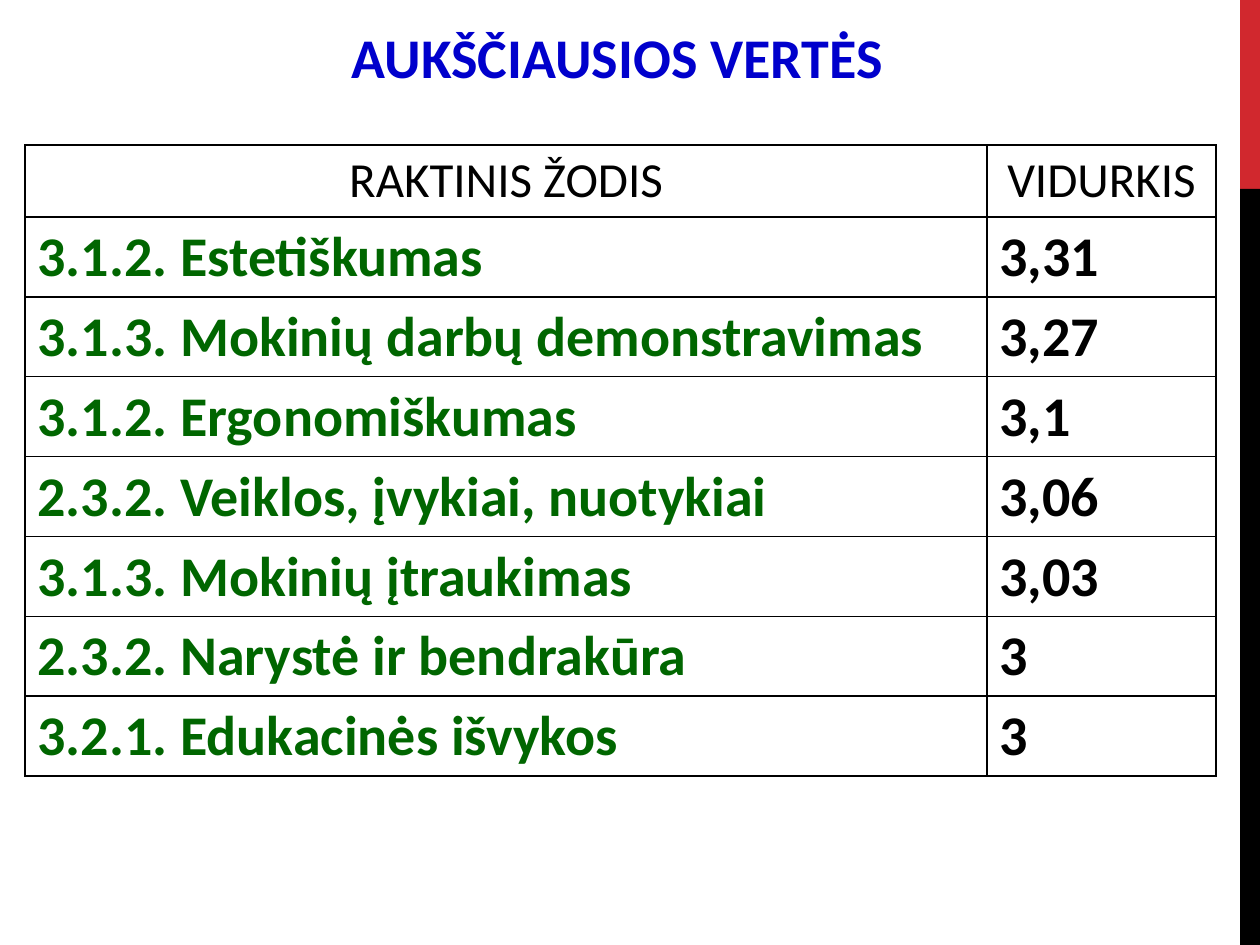
from lxml.etree import SubElement
from pptx import Presentation
from pptx.dml.color import RGBColor
from pptx.enum.shapes import MSO_SHAPE
from pptx.enum.text import PP_ALIGN
from pptx.oxml.ns import qn
from pptx.util import Emu, Pt

RED = RGBColor(0xD1, 0x28, 0x2E)
BLACK = RGBColor(0, 0, 0)
BLUE = RGBColor(0, 0, 0xCC)
GREEN = RGBColor(0, 0x66, 0)
FONT = "Calibri"

HEAD = ("RAKTINIS ŽODIS", "VIDURKIS")
ROWS = [
    ("3.1.2. Estetiškumas", "3,31"),
    ("3.1.3. Mokinių darbų demonstravimas", "3,27"),
    ("3.1.2. Ergonomiškumas", "3,1"),
    ("2.3.2. Veiklos, įvykiai, nuotykiai", "3,06"),
    ("3.1.3. Mokinių įtraukimas", "3,03"),
    ("2.3.2. Narystė ir bendrakūra", "3"),
    ("3.2.1. Edukacinės išvykos", "3"),
]


def px(count):
    """Turn px into EMU at 126 px to the inch."""
    return Emu(round(count * 914400 / 126))


def style(para, size, color, bold, align):
    """Set the font and alignment of a paragraph."""
    para.alignment = align
    para.font.name = FONT
    para.font.size = Pt(size)
    para.font.bold = bold
    para.font.color.rgb = color


def add_band(slide, left, top, width, height):
    """Draw the side band, red for its top fifth and black below."""
    cut = height // 5
    for start, size, color in ((0, cut, RED), (cut, height - cut, BLACK)):
        bar = slide.shapes.add_shape(
            MSO_SHAPE.RECTANGLE, px(left), px(top + start), px(width), px(size))
        bar.shadow.inherit = False
        bar.fill.solid()
        bar.fill.fore_color.rgb = color
        bar.line.fill.background()


def add_title(slide, left, top, width, height):
    """Write the centred title."""
    box = slide.shapes.add_textbox(px(left), px(top), px(width), px(height))
    box.text_frame.word_wrap = True
    para = box.text_frame.paragraphs[0]
    para.text = "AUKŠČIAUSIOS VERTĖS"
    style(para, 32, BLUE, True, PP_ALIGN.CENTER)


def add_edges(cell):
    """Put a thin black line on each side of a cell."""
    props = cell._tc.get_or_add_tcPr()
    for place, side in enumerate(("lnL", "lnR", "lnT", "lnB")):
        line = SubElement(props, qn(f"a:{side}"), w=str(Pt(1)))
        fill = SubElement(line, qn("a:solidFill"))
        SubElement(fill, qn("a:srgbClr"), val=str(BLACK))
        props.insert(place, line)


def add_grid(slide, left, top, width, height):
    """Build the table of key words and their means."""
    data = [HEAD, *ROWS]
    first, last = 72, 229
    frame = slide.shapes.add_table(
        len(data), len(HEAD), px(left), px(top), px(width), px(height))
    table = frame.table
    table.first_row = table.horz_banding = False
    table.columns[0].width = px(width - last)
    table.columns[1].width = px(last)
    step = (height - first) / len(ROWS)
    for i, row in enumerate(data):
        table.rows[i].height = px(step if i else first)
        for j, text in enumerate(row):
            cell = table.cell(i, j)
            cell.fill.background()
            add_edges(cell)
            para = cell.text_frame.paragraphs[0]
            para.text = text
            if i == 0:
                style(para, 28, BLACK, False, PP_ALIGN.CENTER)
            else:
                style(para, 32, BLACK if j else GREEN, True, PP_ALIGN.LEFT)


def main():
    """Build and save the slide."""
    deck = Presentation()
    deck.slide_width, deck.slide_height = px(1260), px(945)
    slide = deck.slides.add_slide(deck.slide_layouts[6])
    add_band(slide, 1240, 0, 20, 945)
    add_title(slide, 0, 16, 1235, 81)
    add_grid(slide, 25, 145, 1191, 631)
    deck.save("out.pptx")


if __name__ == "__main__":
    main()
